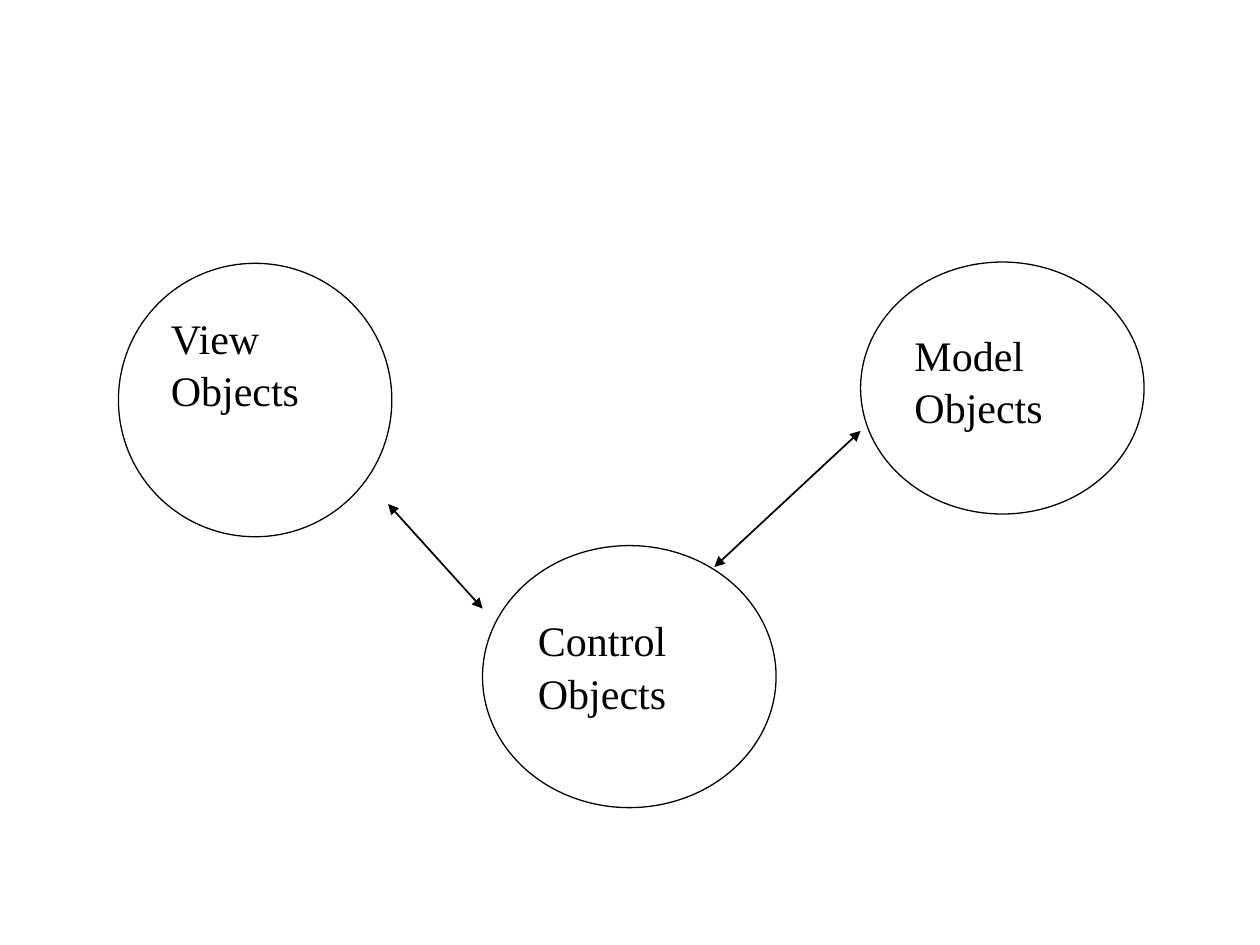
from pptx import Presentation, util as u
from pptx.dml.color import RGBColor
from pptx.enum import shapes, text
from pptx.oxml import parse_xml
from pptx.oxml.ns import nsdecls

BLACK = RGBColor(0x00, 0x00, 0x00)
WHITE = RGBColor(0xFF, 0xFF, 0xFF)


class Diagram:
    """Draw the linked object groups on one slide in a shared style."""

    font_name = "Times New Roman"
    font_size = u.Pt(24)

    def __init__(self, slide):
        self.slide = slide

    def circle(self, lines, left, top, width, height, inset=0.05):
        circle = self.slide.shapes.add_shape(
            shapes.MSO_SHAPE.OVAL,
            u.Inches(left), u.Inches(top), u.Inches(width), u.Inches(height))
        circle.shadow.inherit = False
        circle.fill.solid()
        circle.fill.fore_color.rgb = WHITE
        circle.line.color.rgb = BLACK
        circle.line.width = u.Pt(0.75)
        frame = circle.text_frame
        frame.word_wrap = True
        frame.vertical_anchor = text.MSO_ANCHOR.TOP
        frame.margin_top = u.Inches(inset)
        frame.text = lines
        for para in frame.paragraphs:
            para.alignment = text.PP_ALIGN.LEFT
            para.line_spacing = 1.05
            for span in para.runs:
                span.font.name = self.font_name
                span.font.size = self.font_size
                span.font.color.rgb = BLACK

    def double_arrow(self, start_x, start_y, end_x, end_y):
        arrow = self.slide.shapes.add_connector(
            shapes.MSO_CONNECTOR.STRAIGHT,
            u.Inches(start_x), u.Inches(start_y), u.Inches(end_x), u.Inches(end_y))
        arrow.line.color.rgb = BLACK
        arrow.line.width = u.Pt(1)
        outline = arrow.line._get_or_add_ln()
        for end in ("headEnd", "tailEnd"):
            outline.append(parse_xml(f'<a:{end} {nsdecls("a")} type="triangle"/>'))
        arrow._element.spPr.append(parse_xml(f'<a:effectLst {nsdecls("a")}/>'))


def main():
    deck = Presentation()
    deck.slide_width = u.Inches(10)
    deck.slide_height = u.Inches(7.5)
    diagram = Diagram(deck.slides.add_slide(deck.slide_layouts[6]))
    diagram.circle("Model\nObjects", 6.83, 2.08, 2.25, 2, inset=0.22)
    diagram.circle("View Objects", 0.94, 2.09, 2.17, 2.17)
    diagram.circle("Control\nObjects", 3.83, 4.33, 2.33, 2.08, inset=0.22)
    diagram.double_arrow(5.67, 4.5, 6.83, 3.42)
    diagram.double_arrow(3.83, 4.83, 3.08, 4)
    deck.save("out.pptx")


if __name__ == "__main__":
    main()
